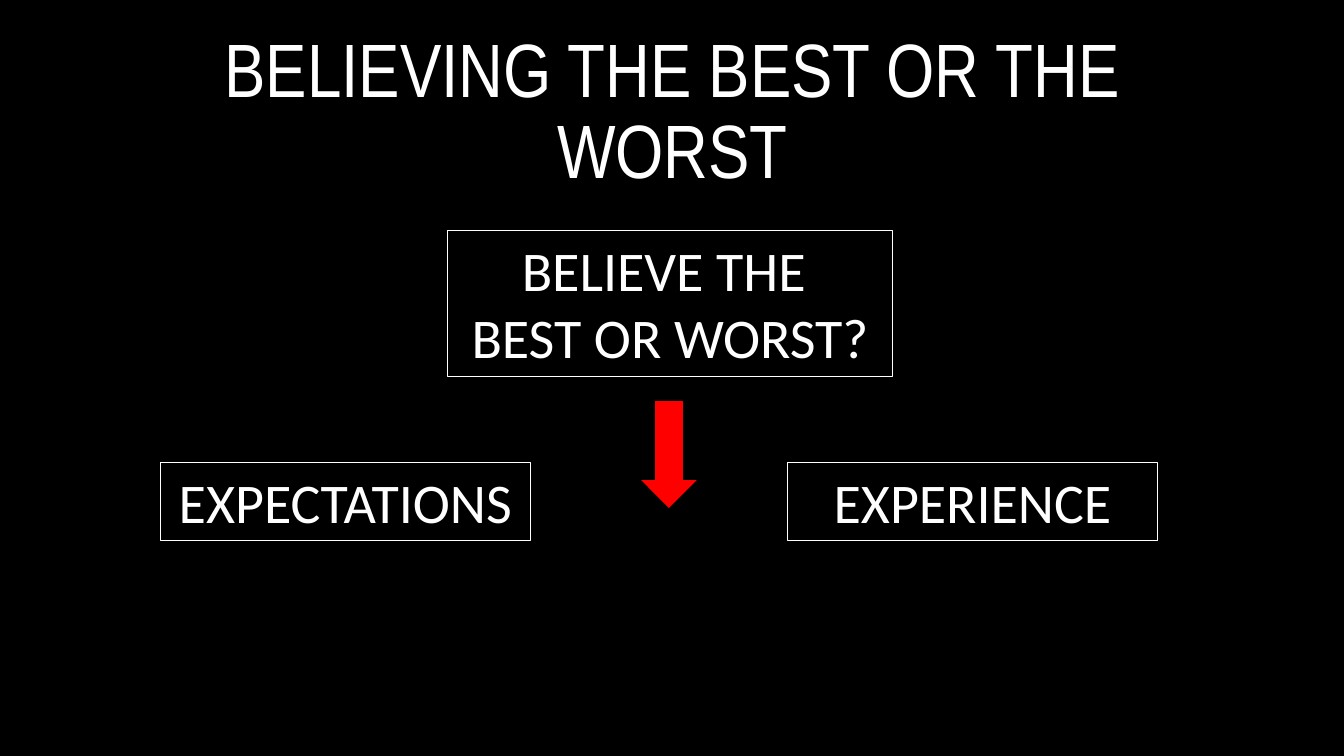
import pptx
import pptx.dml.color
import pptx.enum.shapes
import pptx.enum.text
import pptx.util
from dataclasses import dataclass

Inches = pptx.util.Inches
Pt = pptx.util.Pt
RGB = pptx.dml.color.RGBColor
SHAPE = pptx.enum.shapes.MSO_SHAPE
ANCHOR = pptx.enum.text.MSO_ANCHOR
ALIGN = pptx.enum.text.PP_ALIGN
AUTO = pptx.enum.text.MSO_AUTO_SIZE


@dataclass(frozen=True)
class Theme:
    background: RGB = RGB(0, 0, 0)
    text: RGB = RGB(255, 255, 255)
    arrow: RGB = RGB(255, 0, 0)
    title_font: str = "Arial Narrow"
    body_font: str = "Calibri"
    title_size: int = 54
    body_size: int = 40
    outline: float = 0.75


class Deck:
    """Holds the theme and the current slide."""

    def __init__(self, prs, theme):
        self.theme = theme
        self.s = prs.slides.add_slide(prs.slide_layouts[5])
        fill = self.s.background.fill
        fill.solid()
        fill.fore_color.rgb = theme.background

    def add_text(self, p, text, font, size):
        p.alignment = ALIGN.CENTER
        r = p.add_run()
        r.text = text
        r.font.name = font
        r.font.size = Pt(size)
        r.font.color.rgb = self.theme.text

    def title(self, text, left, top, width, height):
        sp = self.s.shapes.title
        sp.left, sp.top = Inches(left), Inches(top)
        sp.width, sp.height = Inches(width), Inches(height)
        tf = sp.text_frame
        tf.word_wrap = True
        tf.auto_size = AUTO.NONE
        tf.vertical_anchor = ANCHOR.MIDDLE
        p = tf.paragraphs[0]
        p.line_spacing = 0.9
        self.add_text(p, text, self.theme.title_font, self.theme.title_size)

    def box(self, lines, left, top, width, height):
        sp = self.s.shapes.add_textbox(
            Inches(left), Inches(top), Inches(width), Inches(height))
        sp.line.color.rgb = self.theme.text
        sp.line.width = Pt(self.theme.outline)
        tf = sp.text_frame
        tf.word_wrap = True
        tf.auto_size = AUTO.SHAPE_TO_FIT_TEXT
        for i, line in enumerate(lines):
            p = tf.add_paragraph() if i else tf.paragraphs[0]
            self.add_text(p, line, self.theme.body_font, self.theme.body_size)

    def down_arrow(self, left, top, width, height):
        sp = self.s.shapes.add_shape(
            SHAPE.DOWN_ARROW,
            Inches(left), Inches(top), Inches(width), Inches(height))
        sp.shadow.inherit = False
        sp.fill.solid()
        sp.fill.fore_color.rgb = self.theme.arrow
        sp.line.fill.background()


def main():
    prs = pptx.Presentation()
    prs.slide_width, prs.slide_height = Inches(13.33), Inches(7.5)
    deck = Deck(prs, Theme())

    # Title
    deck.title("BELIEVING THE BEST OR THE WORST", 0.92, 0.4, 11.5, 1.45)

    # Two outcomes, side by side
    for label, left in (("EXPECTATIONS", 1.59), ("EXPERIENCE", 7.81)):
        deck.box([label], left, 4.59, 3.67, 0.77)

    # Central question and its arrow
    deck.box(["BELIEVE THE ", "BEST OR WORST?"], 4.44, 2.29, 4.41, 1.45)
    deck.down_arrow(6.36, 3.98, 0.55, 1.06)

    prs.save("out.pptx")


if __name__ == "__main__":
    main()
